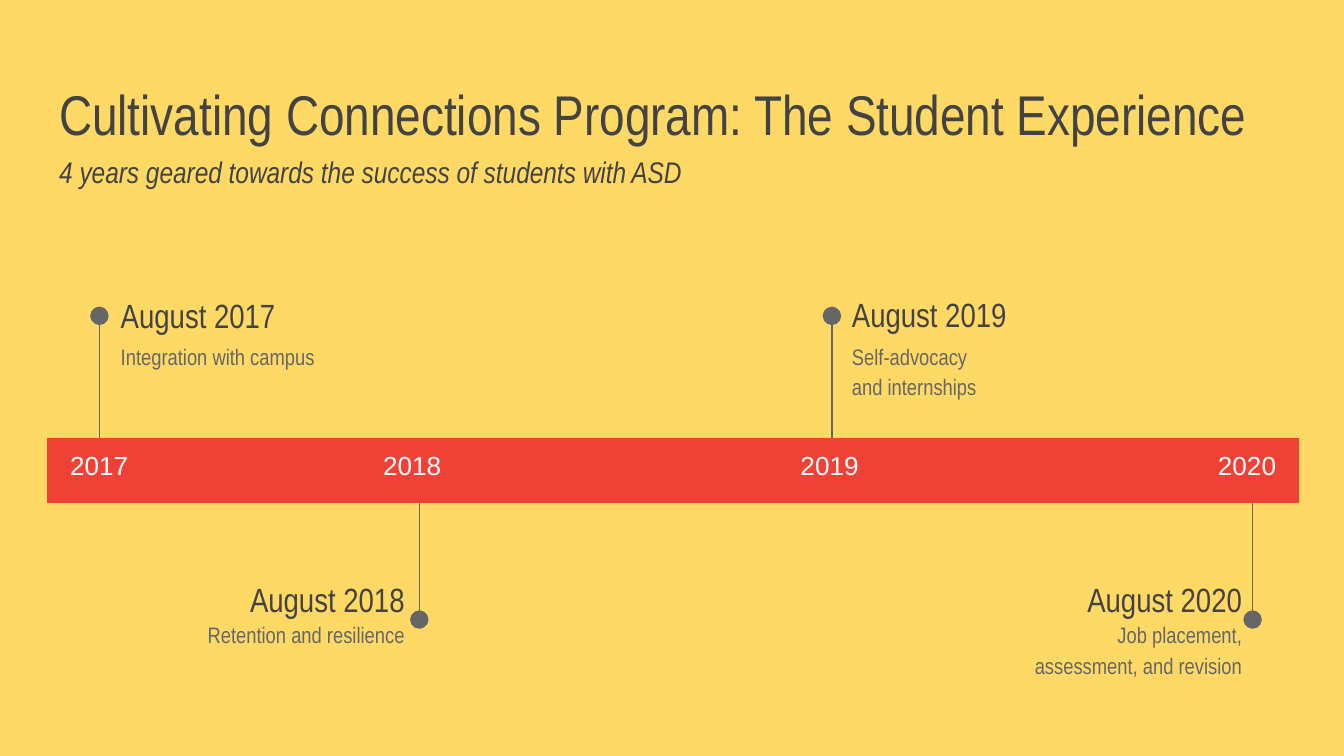
from lxml import etree
from pptx import Presentation
from pptx.dml.color import RGBColor
from pptx.enum.shapes import MSO_CONNECTOR
from pptx.enum.text import MSO_ANCHOR, MSO_AUTO_SIZE, PP_ALIGN
from pptx.oxml.ns import qn
from pptx.util import Inches, Pt

LEFT, CENTER, RIGHT = PP_ALIGN.LEFT, PP_ALIGN.CENTER, PP_ALIGN.RIGHT
TOP, MIDDLE = MSO_ANCHOR.TOP, MSO_ANCHOR.MIDDLE
YELLOW = RGBColor(0xFF, 0xD9, 0x66)
RED = RGBColor(0xEF, 0x41, 0x35)
DARK = RGBColor(0x43, 0x43, 0x43)
GRAY = RGBColor(0x66, 0x66, 0x66)
WHITE = RGBColor(0xFF, 0xFF, 0xFF)
NO_STYLE = "{2D5ABB26-0587-4C30-8999-92F81FD0307C}"

TITLE = "Cultivating Connections Program: The Student Experience"
SUBTITLE = "4 years geared towards the success of students with ASD"
MILESTONES = [
    dict(year="2017", col=0, x=0.74, text_x=0.8, head_y=2.13, head_h=0.43,
         above=True, detail="Integration with campus"),
    dict(year="2018", col=3, x=3.12, text_x=1.13, head_y=4.14, head_h=0.63,
         above=False, detail="Retention and resilience"),
    dict(year="2019", col=7, x=6.19, text_x=6.24, head_y=2.07, head_h=0.54,
         above=True, detail="Self-advocacy\nand internships"),
    dict(year="2020", col=11, x=9.32, text_x=7.36, head_y=4.14, head_h=0.63,
         above=False, detail="Job placement,\nassessment, and revision"),
]
COLUMNS = 12
BAR_X, BAR_Y, BAR_W, BAR_H = 0.35, 3.26, 9.32, 0.42
LABEL_W, DETAIL_H = 1.98, 0.63


def write(p, text, size, color, font="Arial Narrow", italic=False,
          align=LEFT, after=0, spacing=None):
    p.text = text
    p.alignment = align
    p.space_after = Pt(after)
    if spacing:
        p.line_spacing = spacing
    for r in p.runs:
        r.font.name = font
        r.font.size = Pt(size)
        r.font.italic = italic
        r.font.color.rgb = color


def set_frame(tf, anchor=TOP):
    tf.word_wrap = True
    tf.auto_size = MSO_AUTO_SIZE.NONE
    tf.vertical_anchor = anchor
    tf.margin_left = tf.margin_right = Inches(0.1)
    tf.margin_top = tf.margin_bottom = Inches(0.1)


def add_label(s, x, y, h, text, anchor=TOP, **fmt):
    sp = s.shapes.add_textbox(Inches(x), Inches(y), Inches(LABEL_W), Inches(h))
    set_frame(sp.text_frame, anchor)
    write(sp.text_frame.paragraphs[0], text, **fmt)


def add_pin(s, x, y1, y2):
    line = s.shapes.add_connector(MSO_CONNECTOR.STRAIGHT, Inches(x), Inches(y1),
                                  Inches(x), Inches(y2))
    line.line.color.rgb = GRAY
    line.line.width = Pt(0.75)
    ln = line.line._get_or_add_ln()
    etree.SubElement(ln, qn("a:tailEnd"), type="oval", w="lg", len="lg")
    etree.SubElement(line._element.spPr, qn("a:effectLst"))


def add_bar(s):
    frame = s.shapes.add_table(1, COLUMNS, Inches(BAR_X), Inches(BAR_Y),
                               Inches(BAR_W), Inches(BAR_H))
    table = frame.table
    table.first_row = table.horz_banding = False
    table._tbl.tblPr.find(qn("a:tableStyleId")).text = NO_STYLE
    years = {m["col"]: m["year"] for m in MILESTONES}
    for i in range(COLUMNS):
        cell = table.cell(0, i)
        cell.fill.solid()
        cell.fill.fore_color.rgb = RED
        cell.margin_left = cell.margin_right = Inches(0.1)
        cell.margin_top = cell.margin_bottom = Inches(0.1)
        p = cell.text_frame.paragraphs[0]
        if i in years:
            write(p, years[i], size=14, color=WHITE, font="Arial", align=CENTER)
        else:
            end = etree.SubElement(p._p, qn("a:endParaRPr"), sz="1800")
            etree.SubElement(end, qn("a:latin"), typeface="Arial")


def main():
    prs = Presentation()
    prs.slide_width = Inches(10)
    prs.slide_height = prs.slide_width * 9 // 16
    s = prs.slides.add_slide(prs.slide_layouts[5])
    s.background.fill.solid()
    s.background.fill.fore_color.rgb = YELLOW

    title = s.shapes.title
    title.left, title.top = Inches(0.34), Inches(0.49)
    title.width, title.height = Inches(9.32), Inches(0.63)
    tf = title.text_frame
    set_frame(tf)
    write(tf.paragraphs[0], TITLE, size=30, color=DARK, after=4)
    write(tf.add_paragraph(), SUBTITLE, size=16, color=DARK, italic=True, after=4)

    for m in MILESTONES:
        if m["above"]:
            start, end, detail_y, align = 3.26, 2.35, 2.42, LEFT
        else:
            start, end, detail_y, align = 3.69, 4.61, 4.49, RIGHT
        add_pin(s, m["x"], start, end)
        add_label(s, m["text_x"], m["head_y"], m["head_h"], "August " + m["year"],
                  MIDDLE, size=18, color=DARK, align=align)
        add_label(s, m["text_x"], detail_y, DETAIL_H, m["detail"],
                  size=12, color=GRAY, align=align, after=16, spacing=1.15)
    add_bar(s)
    prs.save("out.pptx")


if __name__ == "__main__":
    main()
